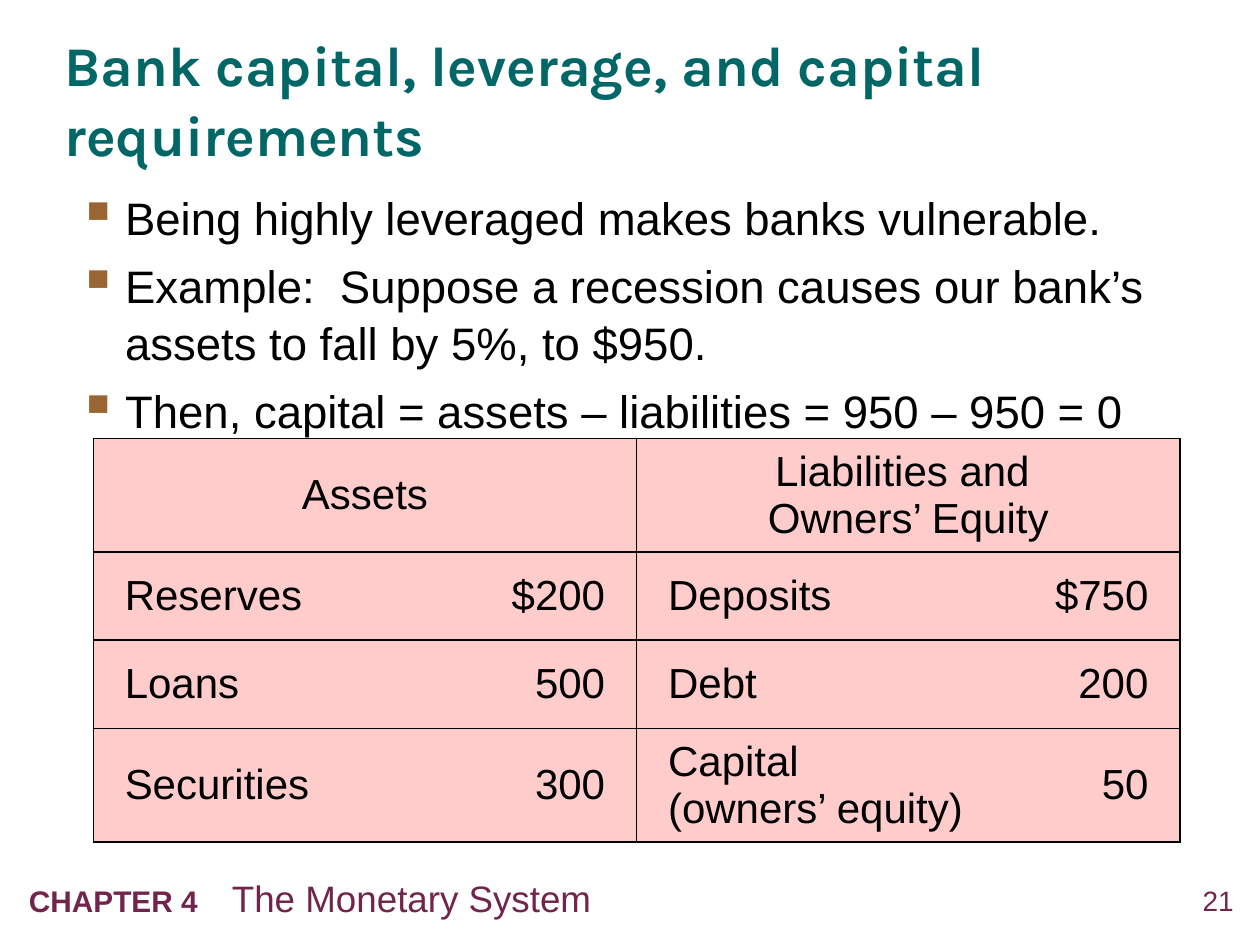
import dataclasses

import lxml.etree
import pptx
import pptx.dml.color
import pptx.enum.text
import pptx.oxml.ns
import pptx.util

Pt = pptx.util.Pt
qn = pptx.oxml.ns.qn
ALIGN = pptx.enum.text.PP_ALIGN
ANCHOR = pptx.enum.text.MSO_ANCHOR

BLACK, TEAL, PLUM, BROWN, PINK = "000000", "006666", "71254B", "996633", "FFCCCC"


@dataclasses.dataclass
class Box:
    left: float
    top: float
    width: float
    height: float
    inset_x: float = 0
    inset_y: float = 0
    anchor: ANCHOR = ANCHOR.TOP


@dataclasses.dataclass
class Entry:
    """One side of a balance sheet row."""
    label: str
    amount: str


BULLETS = [
    "Being highly leveraged makes banks vulnerable.",
    "Example:  Suppose a recession causes our bank’s assets to fall by 5%, to $950.",
    "Then, capital = assets – liabilities = 950 – 950 = 0",
]
HEADERS = ["Assets", "Liabilities and \nOwners’ Equity"]
ENTRIES = [
    (Entry("Reserves", "$200"), Entry("Deposits", "$750")),
    (Entry("Loans", "500"), Entry("Debt", "200")),
    (Entry("Securities", "300"), Entry("Capital \n(owners’ equity)", "50")),
]
COL_WIDTHS = [202.5, 108, 207.5, 103]
ROW_HEIGHTS = [64.8, 50.4, 50.4, 64.8]


def rgb(color: str) -> pptx.dml.color.RGBColor:
    return pptx.dml.color.RGBColor.from_string(color)


def set_font(font, size: float, color: str, bold: bool = False, name: str = "Arial") -> None:
    font.name, font.size, font.bold = name, Pt(size), bold
    font.color.rgb = rgb(color)


def add_text_frame(s, box: Box):
    sp = s.shapes.add_textbox(Pt(box.left), Pt(box.top), Pt(box.width), Pt(box.height))
    tf = sp.text_frame
    tf.word_wrap = True
    tf.vertical_anchor = box.anchor
    tf.margin_left = tf.margin_right = Pt(box.inset_x)
    tf.margin_top = tf.margin_bottom = Pt(box.inset_y)
    return tf


def add_bullet(p, indent: float) -> None:
    pPr = p._p.get_or_add_pPr()
    pPr.set("marL", str(Pt(indent)))
    pPr.set("indent", str(Pt(-indent)))
    color = lxml.etree.Element(qn("a:buClr"))
    lxml.etree.SubElement(color, qn("a:srgbClr"), val=BROWN)
    size = lxml.etree.Element(qn("a:buSzPct"), val="120000")
    char = lxml.etree.Element(qn("a:buChar"), char="▪")
    # Bullet settings follow the spacing and precede the default run properties.
    for element in (color, size, char):
        pPr.find(qn("a:defRPr")).addprevious(element)


def add_tab_stop(p, position: float) -> None:
    tabs = lxml.etree.Element(qn("a:tabLst"))
    lxml.etree.SubElement(tabs, qn("a:tab"), pos=str(Pt(position)), algn="l")
    p._p.get_or_add_pPr().append(tabs)


def set_borders(cell, sides: str) -> None:
    """Draw the named sides (from L, R, T, B) and clear the others."""
    tcPr = cell._tc.get_or_add_tcPr()
    for side in "LRTB":
        ln = lxml.etree.SubElement(tcPr, qn(f"a:ln{side}"), w=str(Pt(1)))
        if side in sides:
            fill = lxml.etree.SubElement(ln, qn("a:solidFill"))
            lxml.etree.SubElement(fill, qn("a:srgbClr"), val=BLACK)
        else:
            lxml.etree.SubElement(ln, qn("a:noFill"))


def fill_cell(cell, text: str, align: ALIGN, inset: float, sides: str) -> None:
    set_borders(cell, sides)
    cell.fill.solid()
    cell.fill.fore_color.rgb = rgb(PINK)
    cell.vertical_anchor = ANCHOR.MIDDLE
    cell.margin_left = cell.margin_right = Pt(inset)
    cell.margin_top = cell.margin_bottom = Pt(3.6)
    p = cell.text_frame.paragraphs[0]
    p.text = text
    p.alignment = align
    set_font(p.font, 24, BLACK)


def add_title(s) -> None:
    p = add_text_frame(s, Box(36.7, 18.7, 649.4, 74.2, anchor=ANCHOR.MIDDLE)).paragraphs[0]
    p.text = "Bank capital, leverage, and capital requirements"
    p.line_spacing = 1.05
    set_font(p.font, 32, TEAL, True, "Karla")


def add_body(s) -> None:
    tf = add_text_frame(s, Box(37.4, 103.7, 646.6, 378.7, 7.2, 3.6))
    for i, text in enumerate(BULLETS):
        p = tf.add_paragraph() if i else tf.paragraphs[0]
        p.text = text
        p.line_spacing = 1.05
        p.space_before = Pt(6)
        set_font(p.font, 26, BLACK)
        add_bullet(p, 27)


def add_balance_sheet(s) -> None:
    table = s.shapes.add_table(len(ROW_HEIGHTS), len(COL_WIDTHS), Pt(53.3), Pt(250.6),
                               Pt(sum(COL_WIDTHS)), Pt(sum(ROW_HEIGHTS))).table
    table.first_row = table.horz_banding = False
    for column, width in zip(table.columns, COL_WIDTHS):
        column.width = Pt(width)
    for row, height in zip(table.rows, ROW_HEIGHTS):
        row.height = Pt(height)
    for side, header in enumerate(HEADERS):
        left, right = 2 * side, 2 * side + 1
        table.cell(0, left).merge(table.cell(0, right))
        fill_cell(table.cell(0, left), header, ALIGN.CENTER, 7.2, "LRTB")
        set_borders(table.cell(0, right), "RTB")
        for r, entries in enumerate(ENTRIES, start=1):
            fill_cell(table.cell(r, left), entries[side].label, ALIGN.LEFT, 18, "LTB")
            fill_cell(table.cell(r, right), entries[side].amount, ALIGN.RIGHT, 18, "RTB")


def add_footer(s) -> None:
    p = add_text_frame(s, Box(665.3, 504.7, 39.6, 23)).paragraphs[0]
    p.text = "21"
    p.alignment = ALIGN.RIGHT
    set_font(p.font, 16, PLUM)

    p = add_text_frame(s, Box(9.4, 496.8, 589, 32.4, 7.2, 3.6)).paragraphs[0]
    add_tab_stop(p, 116)
    for text, size, bold in (("CHAPTER 4\t", 17, True), ("The Monetary System", 21, False)):
        r = p.add_run()
        r.text = text
        set_font(r.font, size, PLUM, bold)


def main() -> None:
    prs = pptx.Presentation()
    prs.slide_width, prs.slide_height = Pt(720), Pt(540)
    s = prs.slides.add_slide(prs.slide_layouts[6])
    add_footer(s)
    add_title(s)
    add_body(s)
    add_balance_sheet(s)
    prs.save("out.pptx")


if __name__ == "__main__":
    main()
